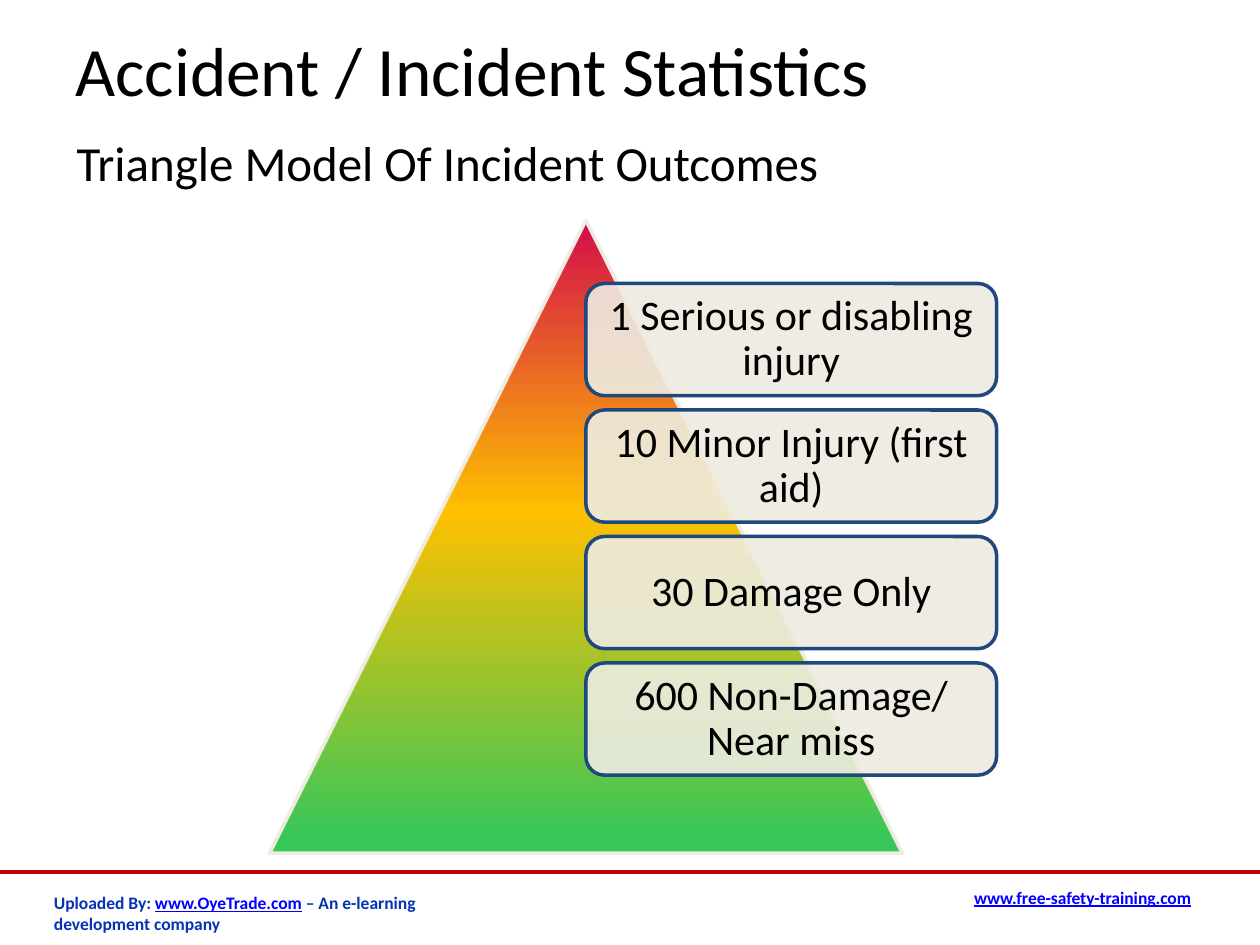
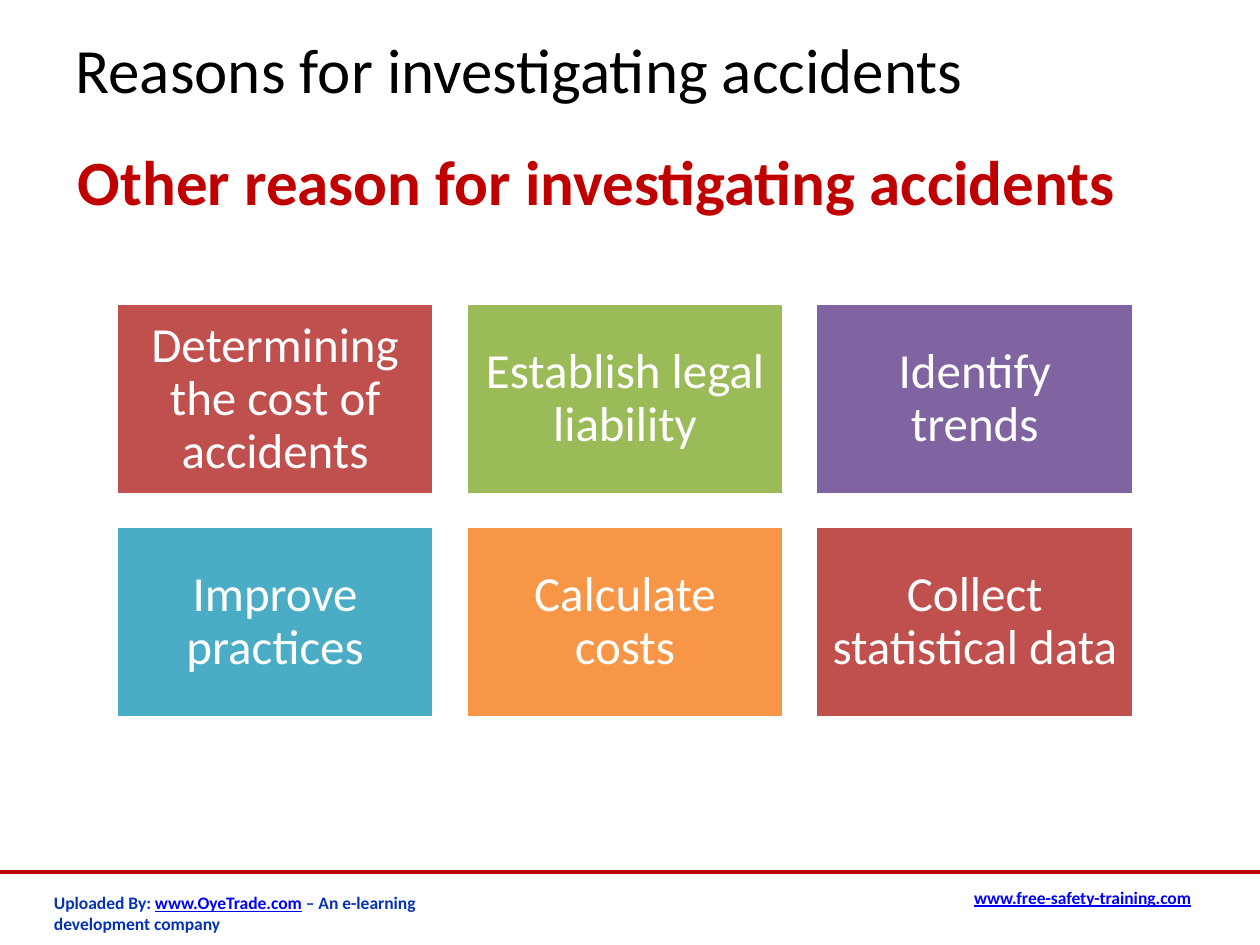
from copy import deepcopy

from pptx import Presentation
from pptx import util as u
from pptx.dml.color import RGBColor
from pptx.enum import shapes, text
from pptx.oxml import ns, xmlchemy

FONT = "Calibri"
COLORS = {
    "black": "000000", "white": "FFFFFF", "accent": "C00000",
    "footer": "0533B3", "link": "0000FF", "cream": "EEECE1", "navy": "1F497D",
    "severe": "D40D4A", "medium": "FFC000", "mild": "37C759",
    "red": "C0504D", "green": "9BBB59", "purple": "8064A2",
    "teal": "4BACC6", "orange": "F79646",
}
FOOTER_CREDIT = [("Uploaded By: ", False), ("www.OyeTrade.com", True),
                 (" – An e-learning development company", False)]
FOOTER_SITE = [("www.free-safety-training.com", True)]
OUTCOMES = ["1 Serious or disabling injury", "10 Minor Injury (first aid)",
            "30 Damage Only", "600 Non-Damage/ Near miss"]
REASONS = [
    ("Determining the cost of accidents", "red"),
    ("Establish legal liability", "green"),
    ("Identify trends", "purple"),
    ("Improve practices", "teal"),
    ("Calculate costs", "orange"),
    ("Collect statistical data", "red"),
]


def rgb(name):
    return RGBColor.from_string(COLORS[name])


def inches(box):
    return [u.Inches(v) for v in box]


def add_run(p, words, size, color, bold=False, underline=False):
    r = p.add_run()
    r.text = words
    r.font.name, r.font.size = FONT, u.Pt(size)
    r.font.bold, r.font.underline = bold, underline
    r.font.color.rgb = rgb(color)


def add_textbox(s, box):
    """Return the first paragraph of a new wrapping text box."""
    tf = s.shapes.add_textbox(*inches(box)).text_frame
    tf.word_wrap = True
    return tf.paragraphs[0]


def add_shape(s, kind, box, line):
    sp = s.shapes.add_shape(kind, *inches(box))
    sp.shadow.inherit = False
    sp.line.color.rgb = rgb(line)
    sp.line.width = u.Pt(2)
    return sp


def add_label(sp, words, size, color, inset):
    tf = sp.text_frame
    tf.word_wrap = True
    tf.vertical_anchor = text.MSO_ANCHOR.MIDDLE
    tf.margin_left = tf.margin_right = u.Inches(inset)
    tf.margin_top = tf.margin_bottom = u.Inches(inset)
    p = tf.paragraphs[0]
    p.alignment = text.PP_ALIGN.CENTER
    p.line_spacing = 0.9
    add_run(p, words, size, color)


def add_footer(s, box):
    left, top, width, _ = box
    rule = s.shapes.add_connector(shapes.MSO_CONNECTOR.STRAIGHT,
                                  *inches((left, top, left + width, top)))
    rule.line.color.rgb = rgb("accent")
    rule.line.width = u.Pt(2.5)
    rule._element.spPr.append(xmlchemy.OxmlElement("a:effectLst"))
    for runs, x, y, align in (
            (FOOTER_CREDIT, 0.33, 0.11, text.PP_ALIGN.LEFT),
            (FOOTER_SITE, 6.3, 0.07, text.PP_ALIGN.RIGHT)):
        p = add_textbox(s, (left + x, top + y, 3.25, 0.4))
        p.alignment = align
        for words, is_link in runs:
            add_run(p, words, 10, "link" if is_link else "footer", True, is_link)


def add_titled_slide(prs, title, size):
    s = prs.slides.add_slide(prs.slide_layouts.get_by_name("Title Only"))
    sp = s.shapes.title
    sp.left, sp.top, sp.width, sp.height = inches((0.5, 0.17, 7.78, 0.75))
    tf = sp.text_frame
    tf.auto_size = text.MSO_AUTO_SIZE.NONE
    tf.vertical_anchor = text.MSO_ANCHOR.MIDDLE
    p = tf.paragraphs[0]
    p.alignment = text.PP_ALIGN.LEFT
    add_run(p, title, size, "black")
    add_footer(s, (0, 6.92, 10, 0.58))
    return s


def fill_gradient(sp, stops):
    """Fill from top to bottom with (position, colour) stops."""
    sp.fill.gradient()
    sp.fill.gradient_angle = 270
    gs_list = sp._element.spPr.find(".//" + ns.qn("a:gsLst"))
    while len(gs_list) < len(stops):
        gs_list.append(deepcopy(gs_list[-1]))
    for stop, (position, color) in zip(sp.fill.gradient_stops, stops):
        stop.position = position
        stop.color.rgb = rgb(color)


def set_opacity(sp, percent):
    alpha = xmlchemy.OxmlElement("a:alpha")
    alpha.set("val", str(percent * 1000))
    sp._element.spPr.find(ns.qn("a:solidFill"))[0].append(alpha)


def add_outcome_triangle(s, box):
    left, top, side, height = box
    triangle = add_shape(s, shapes.MSO_SHAPE.ISOSCELES_TRIANGLE, box, "cream")
    fill_gradient(triangle, [(0, "severe"), (0.46, "medium"), (0.98, "mild")])

    card_width, card_height = 3.26, 0.89
    pitch = height / 5
    for i, outcome in enumerate(OUTCOMES):
        card = add_shape(s, shapes.MSO_SHAPE.ROUNDED_RECTANGLE,
                         (left + side / 2, top + 0.5 + i * pitch,
                          card_width, card_height), "navy")
        card.fill.solid()
        card.fill.fore_color.rgb = rgb("cream")
        set_opacity(card, 90)
        add_label(card, outcome, 24, "black", 0.1)


def add_reason_grid(s, box, columns=3, gap=0.25):
    left, top, width, height = box
    rows = len(REASONS) // columns
    tile_width = (width - gap * (columns - 1)) / columns
    tile_height = (height - gap * (rows - 1)) / rows
    for i, (reason, color) in enumerate(REASONS):
        row, column = divmod(i, columns)
        tile = add_shape(s, shapes.MSO_SHAPE.RECTANGLE,
                         (left + column * (tile_width + gap),
                          top + row * (tile_height + gap),
                          tile_width, tile_height), "white")
        tile.fill.solid()
        tile.fill.fore_color.rgb = rgb(color)
        add_label(tile, reason, 28, "white", 0.12)


def build_statistics_slide(prs):
    s = add_titled_slide(prs, "Accident / Incident Statistics", 39.6)
    p = add_textbox(s, (0.51, 1, 8.92, 0.67))
    add_run(p, "Triangle Model Of Incident Outcomes", 28, "black")
    add_outcome_triangle(s, (2.14, 1.75, 5.02, 5.02))


def build_reasons_slide(prs):
    s = add_titled_slide(prs, "Reasons for investigating accidents", 36)
    p = add_textbox(s, (0.52, 1.08, 8.92, 0.67))
    add_run(p, "Other reason for investigating accidents", 36, "accent", bold=True)
    add_reason_grid(s, (0.92, 2.41, 8.08, 3.29))


def main():
    prs = Presentation()
    prs.slide_width, prs.slide_height = u.Inches(10), u.Inches(7.5)
    build_statistics_slide(prs)
    build_reasons_slide(prs)
    prs.save("out.pptx")


if __name__ == "__main__":
    main()
